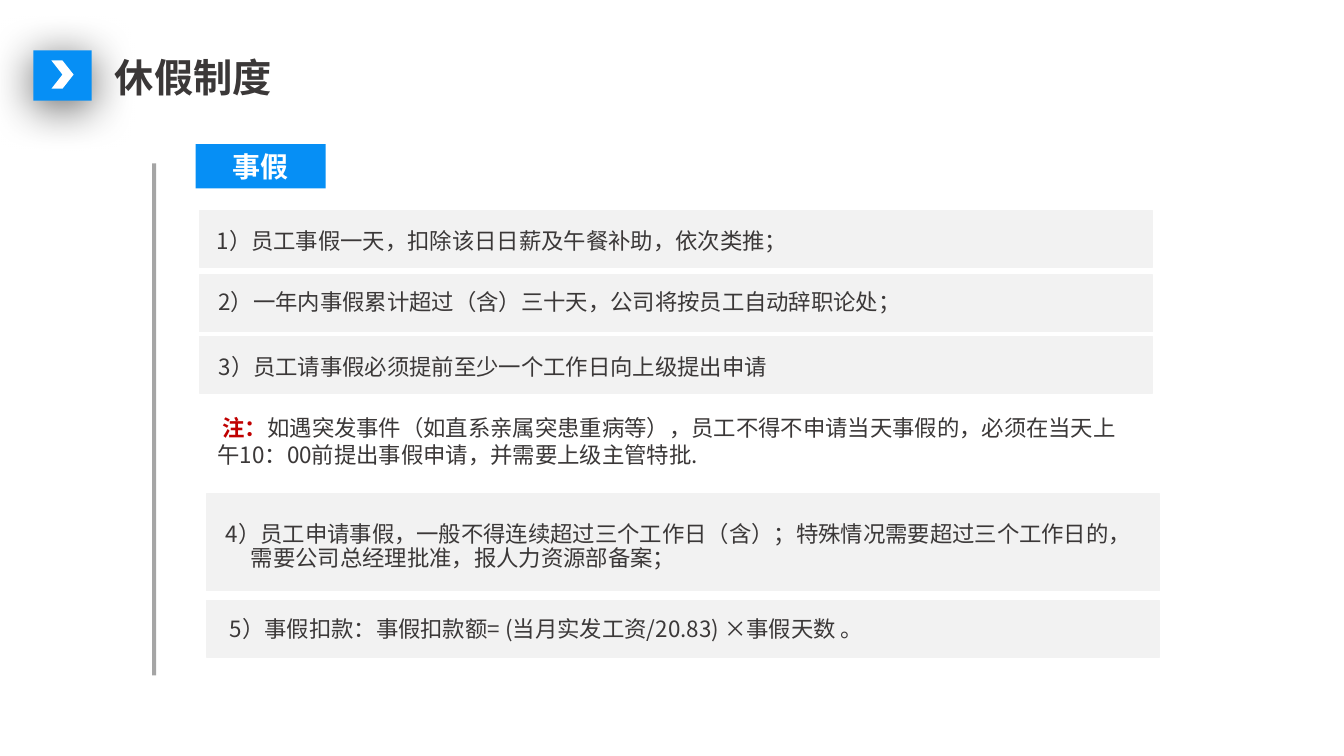
from typing import NamedTuple

from pptx import Presentation
from pptx.dml.color import RGBColor
from pptx.enum.shapes import MSO_SHAPE
from pptx.enum.text import MSO_ANCHOR, MSO_AUTO_SIZE, PP_ALIGN
from pptx.oxml import parse_xml
from pptx.oxml.ns import nsdecls, qn
from pptx.shapes.autoshape import Shape
from pptx.slide import Slide
from pptx.text.text import TextFrame, _Paragraph
from pptx.util import Inches, Pt

RECTANGLE = MSO_SHAPE.RECTANGLE
CHEVRON = MSO_SHAPE.CHEVRON
TOP = MSO_ANCHOR.TOP
MIDDLE = MSO_ANCHOR.MIDDLE
FIT_SHAPE = MSO_AUTO_SIZE.SHAPE_TO_FIT_TEXT
LEFT = PP_ALIGN.LEFT
CENTER = PP_ALIGN.CENTER

BLUE = RGBColor(0x06, 0x8F, 0xF5)
WHITE = RGBColor(0xFF, 0xFF, 0xFF)
DARK = RGBColor(0x3B, 0x38, 0x38)
GRAY = RGBColor(0xA5, 0xA5, 0xA5)
PALE = RGBColor(0xF2, 0xF2, 0xF2)
RED = RGBColor(0xC0, 0x00, 0x00)

FONT = "Noto Sans CJK SC"
BAR_WIDTH = 9.45
TITLE_ONLY = 5


class Box(NamedTuple):
    """Left, top, width and height in inches."""
    left: float
    top: float
    width: float
    height: float


class Rule(NamedTuple):
    text: str
    bar: Box
    text_box: Box


RULES = [
    Rule("1）员工事假一天，扣除该日日薪及午餐补助，依次类推；",
         Box(1.98, 2.09, BAR_WIDTH, 0.56), Box(2.05, 2.23, 8.85, 0.34)),
    Rule("2）一年内事假累计超过（含）三十天，公司将按员工自动辞职论处；",
         Box(1.98, 2.73, BAR_WIDTH, 0.56), Box(2.07, 2.84, 8.64, 0.34)),
    Rule("3）员工请事假必须提前至少一个工作日向上级提出申请",
         Box(1.98, 3.34, BAR_WIDTH, 0.56), Box(2.07, 3.48, 8.88, 0.34)),
    Rule("4）员工申请事假，一般不得连续超过三个工作日（含）；特殊情况需要超过"
         "三个工作日的，需要公司总经理批准，报人力资源部备案；",
         Box(2.05, 4.9, BAR_WIDTH, 0.96), Box(2.14, 5.14, 9.09, 0.59)),
    Rule("5）事假扣款：事假扣款额= (当月实发工资/20.83) ×事假天数 。",
         Box(2.05, 5.96, BAR_WIDTH, 0.56), Box(2.18, 6.08, 8.15, 0.34)),
]


def add_block(slide: Slide, preset: MSO_SHAPE, box: Box, color: RGBColor,
              outlined: bool = False) -> Shape:
    block = slide.shapes.add_shape(preset, *map(Inches, box))
    block.shadow.inherit = False
    block.fill.solid()
    block.fill.fore_color.rgb = color
    if outlined:
        block.line.color.rgb = color
        block.line.width = Pt(1)
    else:
        block.line.fill.background()
    return block


def add_glow(block: Shape) -> None:
    """Replace the empty effect list with a soft shadow falling downwards."""
    properties = block.fill._xPr
    properties.remove(properties.find(qn("a:effectLst")))
    properties.append(parse_xml(
        f'<a:effectLst {nsdecls("a")}>'
        f'<a:outerShdw blurRad="{Pt(32)}" dist="{Pt(5)}" dir="5400000" '
        'algn="t" rotWithShape="0"><a:srgbClr val="000000">'
        '<a:alpha val="62000"/></a:srgbClr></a:outerShdw></a:effectLst>'))


def add_words(paragraph: _Paragraph, words: str, size: int, color: RGBColor,
              bold: bool = False) -> None:
    run = paragraph.add_run()
    run.text = words
    run.font.size = Pt(size)
    run.font.bold = bold
    run.font.color.rgb = color
    run.font.name = FONT
    run.font._rPr.find(qn("a:latin")).addnext(
        parse_xml(f'<a:ea {nsdecls("a")} typeface="{FONT}"/>'))


def set_hanging(paragraph: _Paragraph) -> None:
    paragraph.line_spacing = 0.9
    properties = paragraph._p.get_or_add_pPr()
    properties.set("marL", str(Inches(0.25)))
    properties.set("indent", str(Inches(-0.25)))


def add_text_frame(slide: Slide, box: Box) -> TextFrame:
    frame = slide.shapes.add_textbox(*map(Inches, box)).text_frame
    frame.word_wrap = True
    frame.auto_size = FIT_SHAPE
    return frame


def add_heading(slide: Slide) -> None:
    add_glow(add_block(slide, RECTANGLE, Box(0.33, 0.5, 0.58, 0.5), BLUE))
    add_block(slide, CHEVRON, Box(0.51, 0.6, 0.22, 0.28), WHITE)
    title = slide.shapes.title
    title.left, title.top, title.width, title.height = map(
        Inches, Box(1.04, 0.53, 1.77, 0.53))
    frame = title.text_frame
    frame.word_wrap = False
    frame.auto_size = FIT_SHAPE
    frame.vertical_anchor = TOP
    heading = frame.paragraphs[0]
    heading.alignment = LEFT
    set_hanging(heading)
    add_words(heading, "休假制度", 28, DARK, bold=True)


def add_section_tag(slide: Slide) -> None:
    tag = add_block(slide, RECTANGLE, Box(1.94, 1.43, 1.29, 0.44), BLUE)
    tag.text_frame.vertical_anchor = MIDDLE
    tag.text_frame.auto_size = FIT_SHAPE
    label = tag.text_frame.paragraphs[0]
    label.alignment = CENTER
    add_words(label, "事假", 20, WHITE, bold=True)


def add_rule(slide: Slide, rule: Rule) -> None:
    add_block(slide, RECTANGLE, rule.bar, PALE, outlined=True)
    paragraph = add_text_frame(slide, rule.text_box).paragraphs[0]
    paragraph.space_before = Pt(10)
    set_hanging(paragraph)
    add_words(paragraph, rule.text, 16, DARK)


def add_note(slide: Slide) -> None:
    note = add_text_frame(slide, Box(2.06, 4.06, 9.21, 0.64)).paragraphs[0]
    add_words(note, " 注：", 16, RED, bold=True)
    add_words(note, "如遇突发事件（如直系亲属突患重病等），员工不得不申请当天事假的，"
              "必须在当天上午10：00前提出事假申请，并需要上级主管特批.", 16, DARK)


def main() -> None:
    deck = Presentation()
    deck.slide_width = Inches(13.33)
    deck.slide_height = Inches(7.5)
    slide = deck.slides.add_slide(deck.slide_layouts[TITLE_ONLY])
    add_heading(slide)
    add_section_tag(slide)
    add_block(slide, RECTANGLE, Box(1.51, 1.62, 0.04, 5.08), GRAY)
    for rule in RULES:
        add_rule(slide, rule)
    add_note(slide)
    deck.save("out.pptx")


if __name__ == "__main__":
    main()
